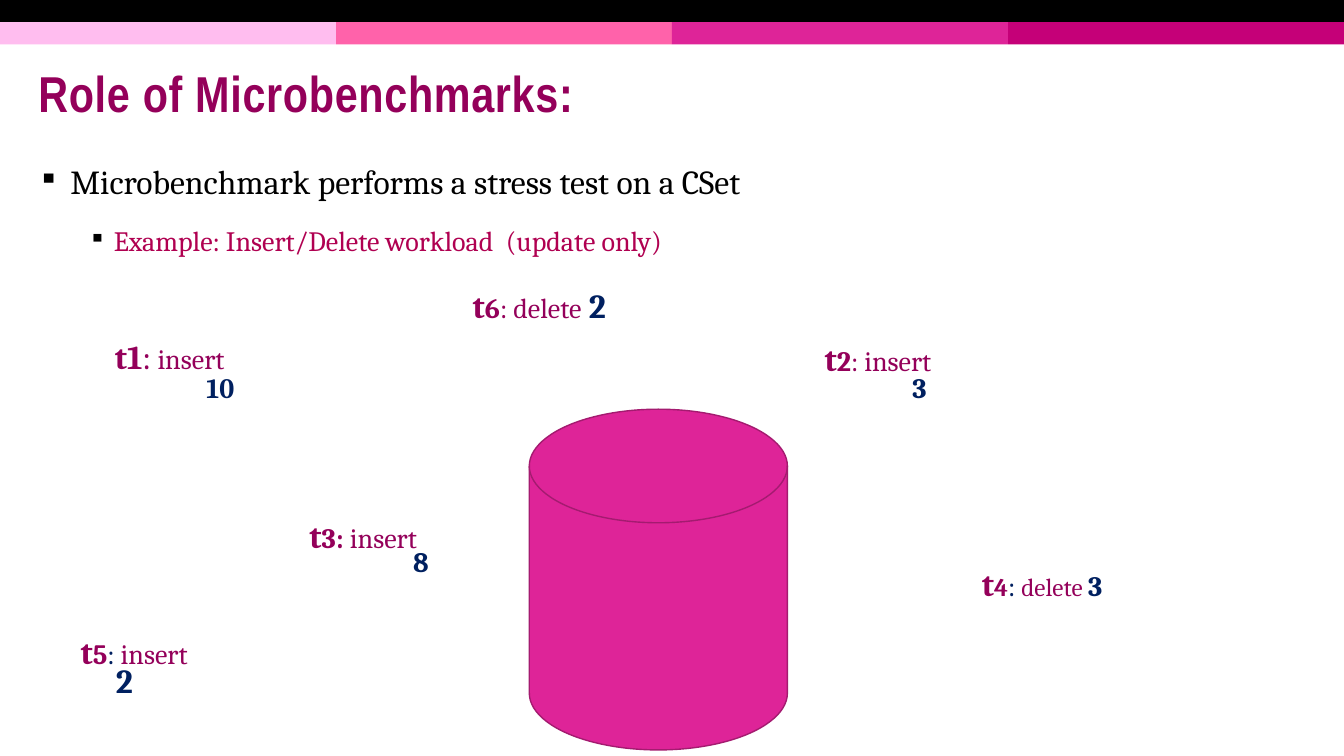
from lxml import etree
from pptx import Presentation
from pptx.dml.color import RGBColor
from pptx.enum.shapes import MSO_SHAPE
from pptx.enum.text import MSO_ANCHOR, MSO_AUTO_SIZE, PP_ALIGN
from pptx.oxml.ns import qn
from pptx.util import Inches, Pt

RECTANGLE = MSO_SHAPE.RECTANGLE
DISK = MSO_SHAPE.FLOWCHART_MAGNETIC_DISK
MIDDLE = MSO_ANCHOR.MIDDLE
LEFT = PP_ALIGN.LEFT
NO_AUTOFIT = MSO_AUTO_SIZE.NONE

COLORS = {
    "black": "000000",
    "plum": "94005A",
    "crimson": "B00051",
    "navy": "002060",
    "magenta": "DE2498",
    "outline": "A41B70",
}
BANDS = ["FFBDEF", "FF62AA", "DE2498", "C50078"]
SLIDE_W, SLIDE_H = 13.33, 7.5
BAND_H = 0.22

# Content
TITLE = "Role of Microbenchmarks:"
# text, size, color, left margin, hanging indent
BULLETS = [
    ("Microbenchmark performs a stress test on a CSet", 24, "black", 0.32, 0.32),
    ("Example: Insert/Delete workload  (update only)", 20, "crimson", 0.75, 0.25),
]
# left, top, width, height, runs of (text, size, color, bold)
OPERATIONS = [
    (1.04, 3.28, 2.16, 0.5, [("t1", 24, "plum", True), (":", 24, "plum", False),
                             (" ", 20, "plum", True), ("insert", 20, "plum", False)]),
    (1.95, 3.63, 0.74, 0.44, [("10", 20, "navy", True)]),
    (8.08, 3.3, 1.63, 0.5, [("t", 24, "plum", True), ("2", 20, "plum", True),
                            (": insert", 20, "plum", False)]),
    (8.95, 3.63, 0.57, 0.44, [("3", 20, "navy", True)]),
    (0.7, 6.21, 1.45, 0.5, [("t", 24, "plum", True), ("5", 20, "plum", True),
                            (": ", 20, "navy", False), ("insert", 20, "plum", False)]),
    (4, 5.35, 0.57, 0.44, [("8", 20, "navy", True)]),
    (9.64, 5.54, 2.16, 0.5, [("t", 24, "plum", True), ("4", 18, "plum", True),
                             (": ", 20, "navy", False), ("delete ", 18, "plum", False),
                             ("3", 20, "navy", True)]),
    (2.97, 5.06, 1.53, 0.5, [("t", 24, "plum", True), ("3: ", 20, "plum", True),
                             ("insert", 20, "plum", False)]),
    (1.05, 6.5, 0.57, 0.5, [("2", 24, "navy", True)]),
    (4.59, 2.78, 1.78, 0.5, [("t", 24, "plum", True), ("6", 20, "plum", True),
                             (": delete", 20, "plum", False), (" ", 24, "plum", False),
                             ("2", 24, "navy", True)]),
]

prs = Presentation()
prs.slide_width, prs.slide_height = Inches(SLIDE_W), Inches(SLIDE_H)
slide = prs.slides.add_slide(prs.slide_layouts[5])


def set_font(font, size, color, bold=False, name="Cambria"):
    font.name, font.size, font.bold = name, Pt(size), bold
    font.color.rgb = RGBColor.from_string(color)


def add_shape(kind, left, top, width, height, fill):
    shape = slide.shapes.add_shape(
        kind, Inches(left), Inches(top), Inches(width), Inches(height))
    shape.shadow.inherit = False
    shape.fill.solid()
    shape.fill.fore_color.rgb = RGBColor.from_string(fill)
    shape.line.fill.background()
    return shape


def add_text_frame(left, top, width, height):
    box = slide.shapes.add_textbox(
        Inches(left), Inches(top), Inches(width), Inches(height))
    box.text_frame.word_wrap = True
    return box.text_frame


def add_bullet(paragraph, margin, hanging):
    props = paragraph._p.get_or_add_pPr()
    props.set("marL", str(Inches(margin)))
    props.set("indent", str(-Inches(hanging)))
    color = etree.SubElement(props, qn("a:buClr"))
    etree.SubElement(color, qn("a:srgbClr"), val=COLORS["black"])
    etree.SubElement(props, qn("a:buSzPct"), val="85000")
    etree.SubElement(props, qn("a:buChar"), char="▪")


# Header bands
add_shape(RECTANGLE, 0, 0, SLIDE_W, BAND_H, COLORS["black"])
band_w = SLIDE_W / len(BANDS)
for i, band_color in enumerate(BANDS):
    add_shape(RECTANGLE, i * band_w, BAND_H, band_w, BAND_H, band_color)

# Title
title = slide.shapes.title
title.left, title.top = Inches(0.28), Inches(0.47)
title.width, title.height = Inches(12.65), Inches(0.98)
title.text_frame.text = TITLE
title.text_frame.vertical_anchor = MIDDLE
title.text_frame.auto_size = NO_AUTOFIT
heading = title.text_frame.paragraphs[0]
heading.alignment = LEFT
heading.line_spacing = 0.85
set_font(heading.font, 36, COLORS["plum"], True, "Arial Narrow")
heading.runs[0].font._element.set("spc", "50")

# Bullets
body = add_text_frame(0.28, 1.55, 12.65, 1.66)
for i, (text, size, color, margin, hanging) in enumerate(BULLETS):
    bullet = body.add_paragraph() if i else body.paragraphs[0]
    bullet.text = text
    bullet.level = i
    bullet.space_before = Pt(8 if i else 0)
    bullet.space_after = Pt(8)
    add_bullet(bullet, margin, hanging)
    set_font(bullet.font, size, COLORS[color])

# Shared set
cset = add_shape(DISK, 5.25, 4.06, 2.56, 3.38, COLORS["magenta"])
cset.line.color.rgb = RGBColor.from_string(COLORS["outline"])
cset.line.width = Pt(1)

# Thread operations and their keys
for left, top, width, height, runs in OPERATIONS:
    operation = add_text_frame(left, top, width, height).paragraphs[0]
    for text, size, color, bold in runs:
        run = operation.add_run()
        run.text = text
        set_font(run.font, size, COLORS[color], bold)

prs.save("out.pptx")
